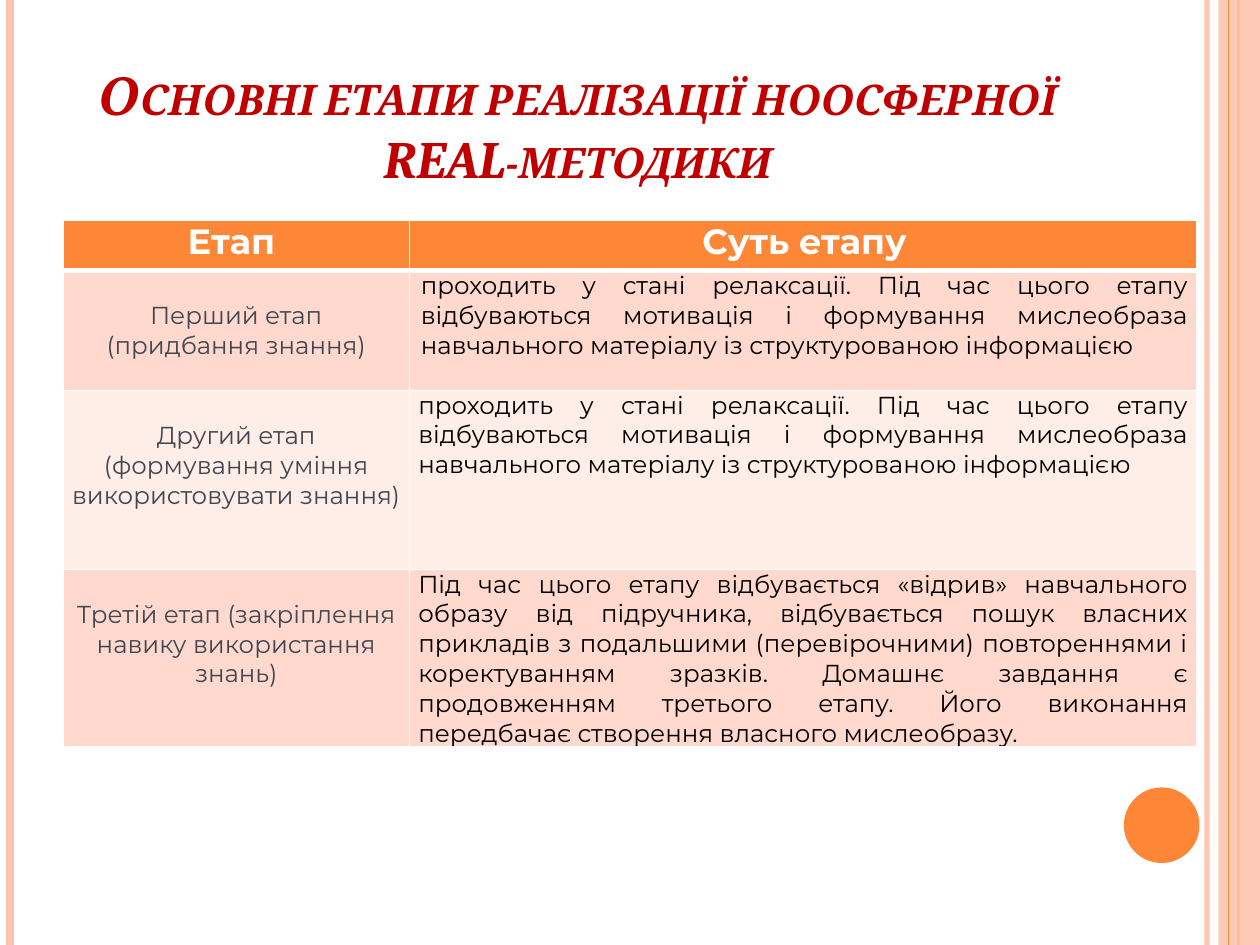
from lxml.etree import SubElement
from pptx import Presentation
from pptx.dml.color import RGBColor
from pptx.enum.shapes import MSO_CONNECTOR as Connector, MSO_SHAPE as Shape
from pptx.enum.text import MSO_ANCHOR as Anchor, PP_ALIGN as Align
from pptx.oxml.ns import qn
from pptx.util import Inches, Pt

WHITE = RGBColor(0xFF, 0xFF, 0xFF)
BLACK = RGBColor(0x00, 0x00, 0x00)
ORANGE = RGBColor(0xFE, 0x86, 0x37)
PEACH = RGBColor(0xFE, 0xC3, 0xAE)
RED = RGBColor(0xC0, 0x00, 0x00)
SLATE = RGBColor(0x41, 0x47, 0x52)
BANDS = (RGBColor(0xFF, 0xD9, 0xCE), RGBColor(0xFF, 0xED, 0xE8))

WIDTH, HEIGHT = Inches(10), Inches(7.5)
COLUMNS = (2.75, 6.25)
ROWS = (0.4, 0.95, 1.42, 1.41)
LINE_HEIGHT = 0.24

TITLE = "Основні етапи реалізації ноосферної REAL-методики"
HEADINGS = ("Етап ", "Суть етапу")
RELAXED = (
    "проходить у стані релаксації. Під час цього етапу відбуваються мотивація "
    "і формування мислеобраза навчального матеріалу із структурованою інформацією"
)
STAGES = (
    ("Перший етап (придбання знання)", RELAXED),
    ("Другий етап (формування уміння використовувати знання)", RELAXED),
    (
        "Третій етап (закріплення навику використання знань)",
        "Під час цього етапу відбувається «відрив» навчального образу від підручника, "
        "відбувається пошук власних прикладів з подальшими (перевірочними) повтореннями "
        "і коректуванням зразків. Домашнє завдання є продовженням третього етапу. "
        "Його виконання передбачає створення власного мислеобразу.",
    ),
)


def share(left, top, width, height):
    return (
        round(left * WIDTH),
        round(top * HEIGHT),
        round(width * WIDTH),
        round(height * HEIGHT),
    )


def set_alpha(element, percent):
    color = next(element.iter(qn("a:srgbClr")))
    SubElement(color, qn("a:alpha"), val=str(percent * 1000))


def style(para, name, size, color, bold=False, italic=False):
    font = para.font
    font.name, font.size = name, Pt(size)
    font.bold, font.italic = bold, italic
    font.color.rgb = color


def add_rule(page, x, color, weight):
    left = round(x * WIDTH)
    rule = page.shapes.add_connector(Connector.STRAIGHT, left, 0, left, HEIGHT)
    rule.line.color.rgb = color
    rule.line.width = Pt(weight)
    SubElement(rule._element.spPr, qn("a:effectLst"))
    return rule


def add_solid(page, kind, box, color):
    solid = page.shapes.add_shape(kind, *box)
    solid.shadow.inherit = False
    solid.fill.solid()
    solid.fill.fore_color.rgb = color
    solid.line.fill.background()
    return solid


def add_frame(page):
    inner = add_rule(page, 0.958, PEACH, 3)
    set_alpha(inner._element.spPr, 93)
    add_rule(page, 0.008, PEACH, 4.5)
    add_rule(page, 0.983, ORANGE, 1.5)
    strip = add_solid(page, Shape.RECTANGLE, share(0.967, 0, 0.033, 1), PEACH)
    set_alpha(strip._element.spPr, 87)
    add_rule(page, 0.975, ORANGE, 0.75)
    add_solid(page, Shape.OVAL, share(0.892, 0.8333, 0.06, 0.08), ORANGE)


def add_title(page, box):
    frame = page.shapes.add_textbox(*box).text_frame
    frame.word_wrap = True
    frame.vertical_anchor = Anchor.BOTTOM
    para = frame.paragraphs[0]
    para.text = TITLE
    para.alignment = Align.CENTER
    style(para, "Cambria", 30, RED, bold=True, italic=True)
    para._p.pPr.find(qn("a:defRPr")).set("cap", "small")


def set_borders(cell, top, bottom):
    properties = cell._tc.get_or_add_tcPr()
    for side, weight in (("L", 1), ("R", 1), ("T", top), ("B", bottom)):
        line = SubElement(properties, qn(f"a:ln{side}"), w=str(Pt(weight)))
        fill = SubElement(line, qn("a:solidFill"))
        SubElement(fill, qn("a:srgbClr"), val=str(WHITE))


def fill_cell(cell, text, row, column):
    heading = row == 0
    set_borders(cell, 3 if row == 1 else 1, 3 if heading else 1)
    cell.fill.solid()
    cell.fill.fore_color.rgb = ORANGE if heading else BANDS[(row - 1) % 2]
    cell.margin_left = Inches(0.09 if column and row < 2 else 0.07)
    cell.margin_right = Inches(0.07)
    cell.margin_top = 0 if heading or column else Inches(LINE_HEIGHT)
    cell.margin_bottom = 0
    para = cell.text_frame.paragraphs[0]
    para.text = text
    if heading:
        para.alignment = Align.CENTER
        style(para, "Montserrat", 20, WHITE, bold=True)
    else:
        para.alignment = Align.JUSTIFY if column else Align.CENTER
        style(para, "Montserrat", 14, BLACK if column else SLATE)


def add_stages(page, box):
    table = page.shapes.add_table(len(ROWS), len(COLUMNS), *box).table
    for column, width in zip(table.columns, COLUMNS):
        column.width = round(box[2] * width / sum(COLUMNS))
    for row, height in zip(table.rows, ROWS):
        row.height = round(box[3] * height / sum(ROWS))
    for row, texts in enumerate((HEADINGS, *STAGES)):
        for column, text in enumerate(texts):
            fill_cell(table.cell(row, column), text, row, column)


def main():
    deck = Presentation()
    deck.slide_width, deck.slide_height = WIDTH, HEIGHT
    page = deck.slides.add_slide(deck.slide_layouts[6])
    add_frame(page)
    add_title(page, share(0.05, 0.04, 0.817, 0.1667))
    add_stages(page, share(0.05, 0.2333, 0.9, 0.5573))
    deck.save("out.pptx")


if __name__ == "__main__":
    main()
